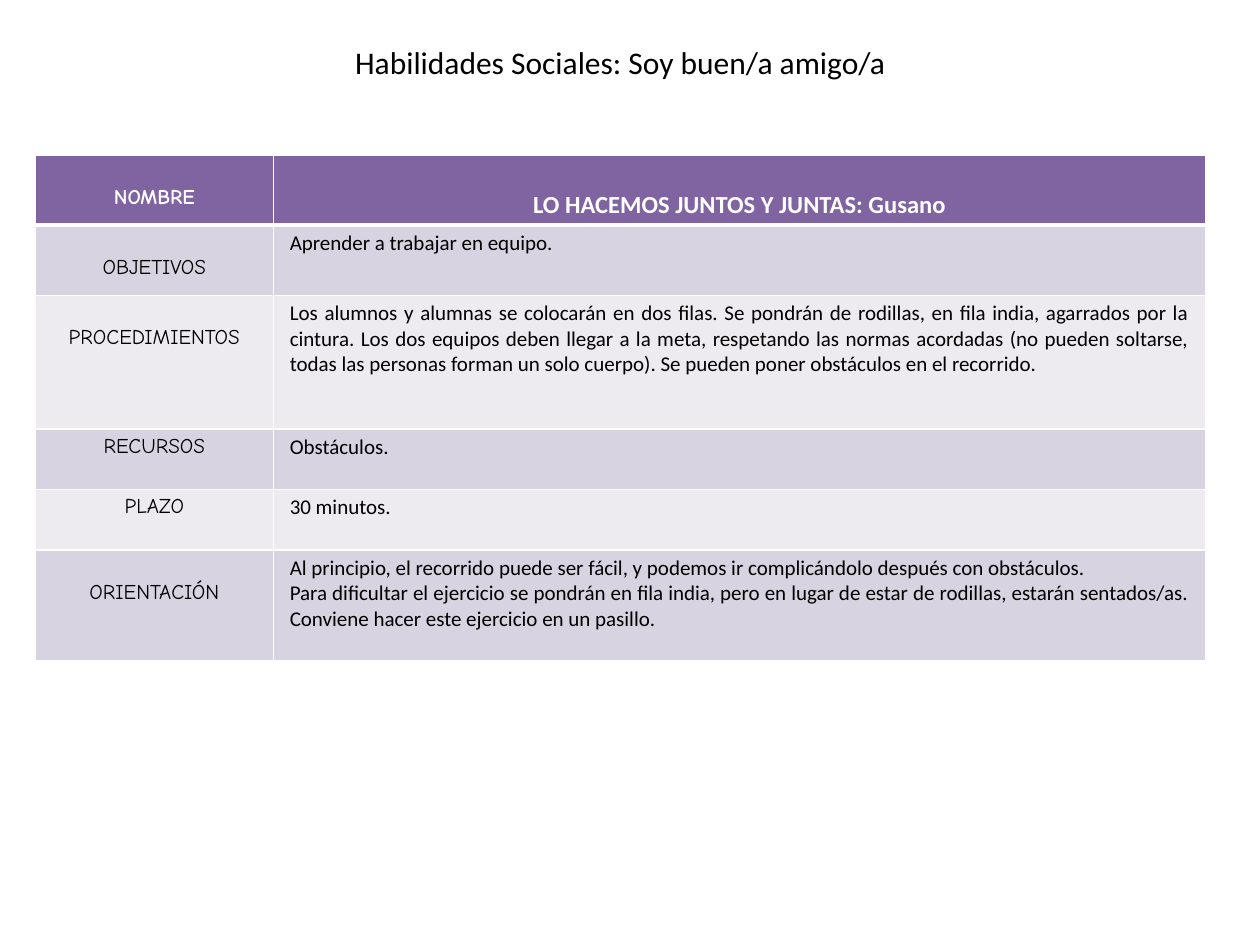
from dataclasses import dataclass

from lxml import etree
from pptx import Presentation
from pptx import util as u
from pptx.dml.color import RGBColor
from pptx.enum import text
from pptx.oxml import ns

COLORS = {
    "header": "8064A2",
    "dark_band": "D8D3E0",
    "light_band": "EDEAF0",
    "white": "FFFFFF",
    "black": "000000",
}
BODY_FONT, LABEL_FONT = "Calibri", "Comic Neue"
COL_WIDTHS = (1.89, 7.4)
PAD_X, PAD_Y = 0.13, 0.04
LABEL_DROP = 0.2  # one 12 pt line
HEADER_DROP = 0.24  # one 14 pt line


@dataclass
class Row:
    label: str
    paragraphs: tuple[str, ...]
    height: float
    label_drop: float = LABEL_DROP


ROWS = (
    Row("NOMBRE", ("LO HACEMOS JUNTOS Y JUNTAS: Gusano",), 0.55),
    Row("OBJETIVOS", ("Aprender a trabajar en equipo.",), 0.56),
    Row("PROCEDIMIENTOS", (
        "Los alumnos y alumnas se colocarán en dos filas. Se pondrán de rodillas, "
        "en fila india, agarrados por la cintura. Los dos equipos deben llegar a la "
        "meta, respetando las normas acordadas (no pueden soltarse, todas las personas "
        "forman un solo cuerpo). Se pueden poner obstáculos en el recorrido.",
    ), 1.06),
    Row("RECURSOS", ("Obstáculos.",), 0.48, label_drop=0),
    Row("PLAZO", ("30 minutos.",), 0.48, label_drop=0),
    Row("ORIENTACIÓN", (
        "Al principio, el recorrido puede ser fácil, y podemos ir complicándolo "
        "después con obstáculos.",
        "Para dificultar el ejercicio se pondrán en fila india, pero en lugar de estar "
        "de rodillas, estarán sentados/as. Conviene hacer este ejercicio en un pasillo.",
    ), 0.88),
)


def write(tf, paragraphs, *, font=BODY_FONT, size=12, color="black", bold=False,
          align=text.PP_ALIGN.LEFT) -> None:
    for i, line in enumerate(paragraphs):
        p = tf.paragraphs[0] if i == 0 else tf.add_paragraph()
        p.alignment = align
        r = p.add_run()
        r.text = line
        r.font.name = font
        r.font.size = u.Pt(size)
        r.font.bold = bold
        r.font.color.rgb = RGBColor.from_string(COLORS[color])


def set_borders(cell, **widths: float) -> None:
    """Draw white borders; widths maps the sides L, R, T, B to points."""
    tc_pr = cell._tc.get_or_add_tcPr()
    for i, (side, width) in enumerate(widths.items()):
        ln = etree.Element(ns.qn(f"a:ln{side}"), w=str(u.Pt(width)))
        fill = etree.SubElement(ln, ns.qn("a:solidFill"))
        etree.SubElement(fill, ns.qn("a:srgbClr"), val=COLORS["white"])
        tc_pr.insert(i, ln)


def style_cell(cell, fill: str, drop: float, top: float, bottom: float) -> None:
    """Fill and frame a cell whose text starts drop inches below its padding."""
    cell.margin_left = cell.margin_right = u.Inches(PAD_X)
    cell.margin_top = u.Inches(PAD_Y + drop)
    cell.margin_bottom = u.Inches(PAD_Y)
    cell.fill.solid()
    cell.fill.fore_color.rgb = RGBColor.from_string(COLORS[fill])
    set_borders(cell, L=1, R=1, T=top, B=bottom)


def add_activity_table(s) -> None:
    table = s.shapes.add_table(
        len(ROWS), len(COL_WIDTHS), u.Inches(0.28), u.Inches(1.23),
        u.Inches(sum(COL_WIDTHS)), u.Inches(sum(row.height for row in ROWS))).table
    for column, width in zip(table.columns, COL_WIDTHS):
        column.width = u.Inches(width)
    for i, row in enumerate(ROWS):
        table.rows[i].height = u.Inches(row.height)
        header = i == 0
        fill = "header" if header else ("light_band", "dark_band")[i % 2]
        color = "white" if header else "black"
        top, bottom = 3 if i == 1 else 1, 3 if header else 1
        label, content = table.cell(i, 0), table.cell(i, 1)
        style_cell(label, fill, row.label_drop, top, bottom)
        style_cell(content, fill, HEADER_DROP if header else 0, top, bottom)
        write(label.text_frame, (row.label,), font=LABEL_FONT, color=color,
              bold=header, align=text.PP_ALIGN.CENTER)
        write(content.text_frame, row.paragraphs, size=14 if header else 12,
              color=color, bold=header,
              align=text.PP_ALIGN.CENTER if header else text.PP_ALIGN.JUSTIFY)


def add_title(s) -> None:
    sp = s.shapes.add_textbox(u.Inches(2.72), u.Inches(0.29), u.Inches(4.8), u.Inches(0.4))
    tf = sp.text_frame
    tf.word_wrap = True
    tf.auto_size = text.MSO_AUTO_SIZE.SHAPE_TO_FIT_TEXT
    write(tf, ("Habilidades Sociales: Soy buen/a amigo/a",), size=18)


def main() -> None:
    prs = Presentation()
    prs.slide_width, prs.slide_height = u.Inches(10), u.Inches(7.5)
    s = prs.slides.add_slide(prs.slide_layouts[6])
    add_activity_table(s)
    add_title(s)
    prs.save("out.pptx")


if __name__ == "__main__":
    main()
